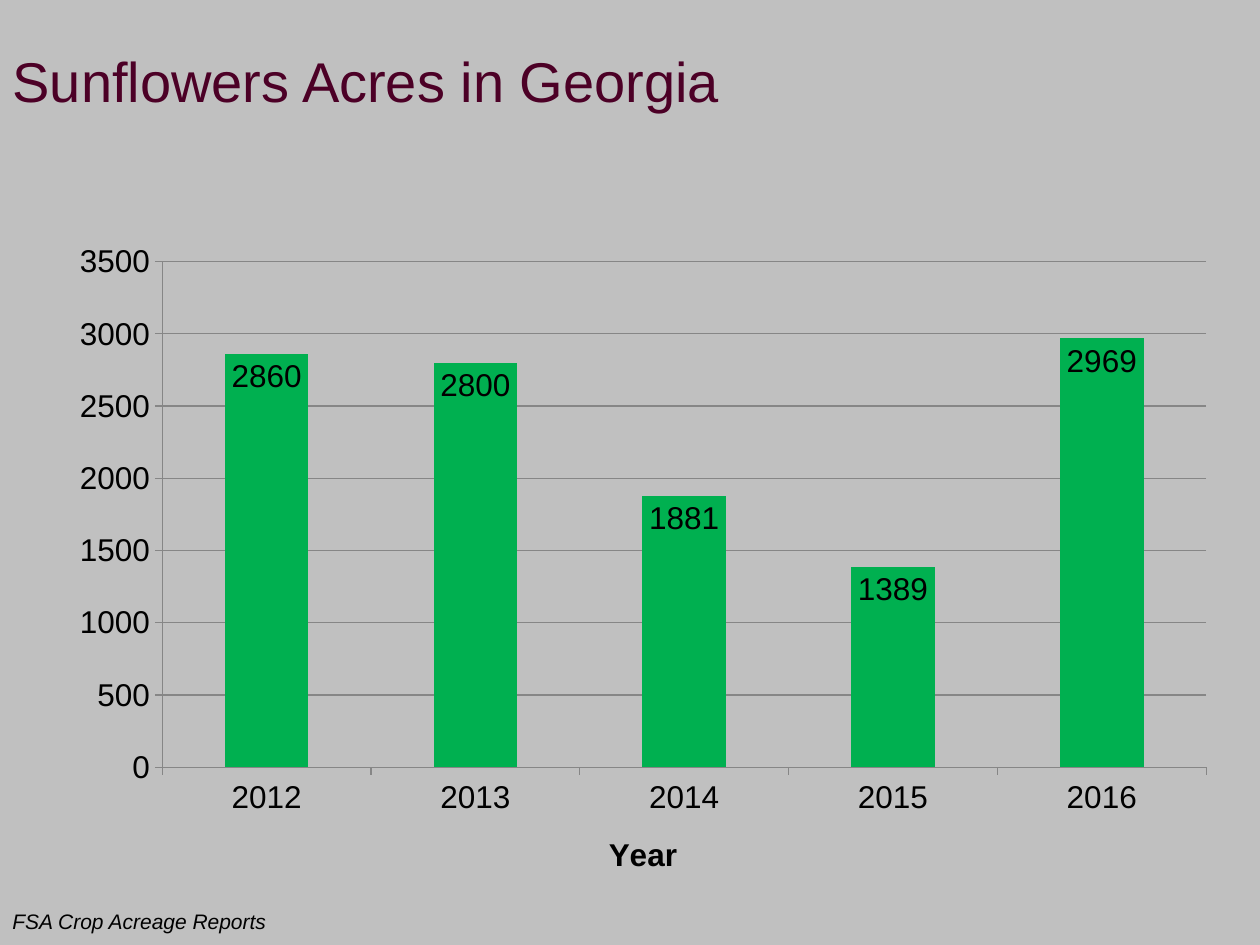
import pptx
import pptx.chart.data
import pptx.dml.color
import pptx.enum.chart
import pptx.enum.text
import pptx.oxml
import pptx.oxml.ns
import pptx.util
from pptx.util import Inches

ACRES = {"2012": 2860, "2013": 2800, "2014": 1881, "2015": 1389, "2016": 2969}
GRID_COLOR = "868686"


def rgb(value):
    return pptx.dml.color.RGBColor.from_string(value)


def format_font(font, color="000000", **values):
    font.color.rgb = rgb(color)
    for name, value in {"name": "Arial", **values}.items():
        setattr(font, name, value)


def format_line(line):
    line.color.rgb = rgb(GRID_COLOR)
    line.width = pptx.util.Pt(0.75)


def place_title(slide, left, top, width, height):
    title = slide.shapes.title
    title.left, title.top, title.width, title.height = left, top, width, height
    frame = title.text_frame
    frame.text = "Sunflowers Acres in Georgia"
    frame.vertical_anchor = pptx.enum.text.MSO_ANCHOR.MIDDLE
    paragraph = frame.paragraphs[0]
    paragraph.alignment = pptx.enum.text.PP_ALIGN.LEFT
    format_font(paragraph.runs[0].font, "4C0026", size=pptx.util.Pt(32))


def set_plot_area(chart, **fractions):
    """Fix the inner plot area as fractions of the chart box."""
    parts = "".join(f'<c:{name} val="{value}"/>' for name, value in fractions.items())
    layout = pptx.oxml.parse_xml(
        f'<c:layout {pptx.oxml.ns.nsdecls("c")}><c:manualLayout>'
        '<c:layoutTarget val="inner"/><c:xMode val="edge"/><c:yMode val="edge"/>'
        f"{parts}</c:manualLayout></c:layout>"
    )
    plot_area = chart.plots[0]._element.getparent()
    for old_layout in plot_area.findall(pptx.oxml.ns.qn("c:layout")):
        plot_area.remove(old_layout)
    plot_area.insert(0, layout)


def place_acres_chart(slide, left, top, width, height):
    data = pptx.chart.data.CategoryChartData()
    data.categories = list(ACRES)
    data.add_series("Series 1", list(ACRES.values()))
    chart = slide.shapes.add_chart(
        pptx.enum.chart.XL_CHART_TYPE.COLUMN_CLUSTERED, left, top, width, height, data
    ).chart
    chart.has_title = False
    chart.has_legend = False
    format_font(chart.font, size=pptx.util.Pt(18))
    set_plot_area(chart, x=0.09, y=0.05, w=0.89, h=0.75)

    plot = chart.plots[0]
    plot.vary_by_categories = False
    plot.gap_width = 150
    fill = plot.series[0].format.fill
    fill.solid()
    fill.fore_color.rgb = rgb("00B050")
    plot.has_data_labels = True
    labels = plot.data_labels
    labels.show_value = True
    labels.position = pptx.enum.chart.XL_LABEL_POSITION.INSIDE_END
    format_font(labels.font, size=pptx.util.Pt(18))

    for axis in (chart.category_axis, chart.value_axis):
        axis.major_tick_mark = pptx.enum.chart.XL_TICK_MARK.OUTSIDE
        format_line(axis.format.line)
    chart.value_axis.maximum_scale = 3500
    chart.value_axis.minimum_scale = 0
    chart.value_axis.major_unit = 500
    format_line(chart.value_axis.major_gridlines.format.line)

    title_frame = chart.category_axis.axis_title.text_frame
    title_frame.text = "Year"
    format_font(title_frame.paragraphs[0].runs[0].font, size=pptx.util.Pt(18), bold=True)


def place_credit(slide, left, top, width, height):
    frame = slide.shapes.add_textbox(left, top, width, height).text_frame
    frame.word_wrap = False
    frame.auto_size = pptx.enum.text.MSO_AUTO_SIZE.SHAPE_TO_FIT_TEXT
    frame.text = "FSA Crop Acreage Reports"
    format_font(frame.paragraphs[0].runs[0].font, size=pptx.util.Pt(12), italic=True)


def main():
    presentation = pptx.Presentation()
    presentation.slide_width, presentation.slide_height = Inches(10), Inches(7.5)
    slide = presentation.slides.add_slide(presentation.slide_layouts.get_by_name("Title Only"))
    background = slide.background.fill
    background.solid()
    background.fore_color.rgb = rgb("C0C0C0")
    place_title(slide, Inches(0), Inches(0), Inches(8.11), Inches(1.27))
    place_acres_chart(slide, Inches(0.45), Inches(1.81), Inches(9.31), Inches(5.35))
    place_credit(slide, Inches(0), Inches(7.16), Inches(2.23), Inches(0.3))
    presentation.save("out.pptx")


if __name__ == "__main__":
    main()
